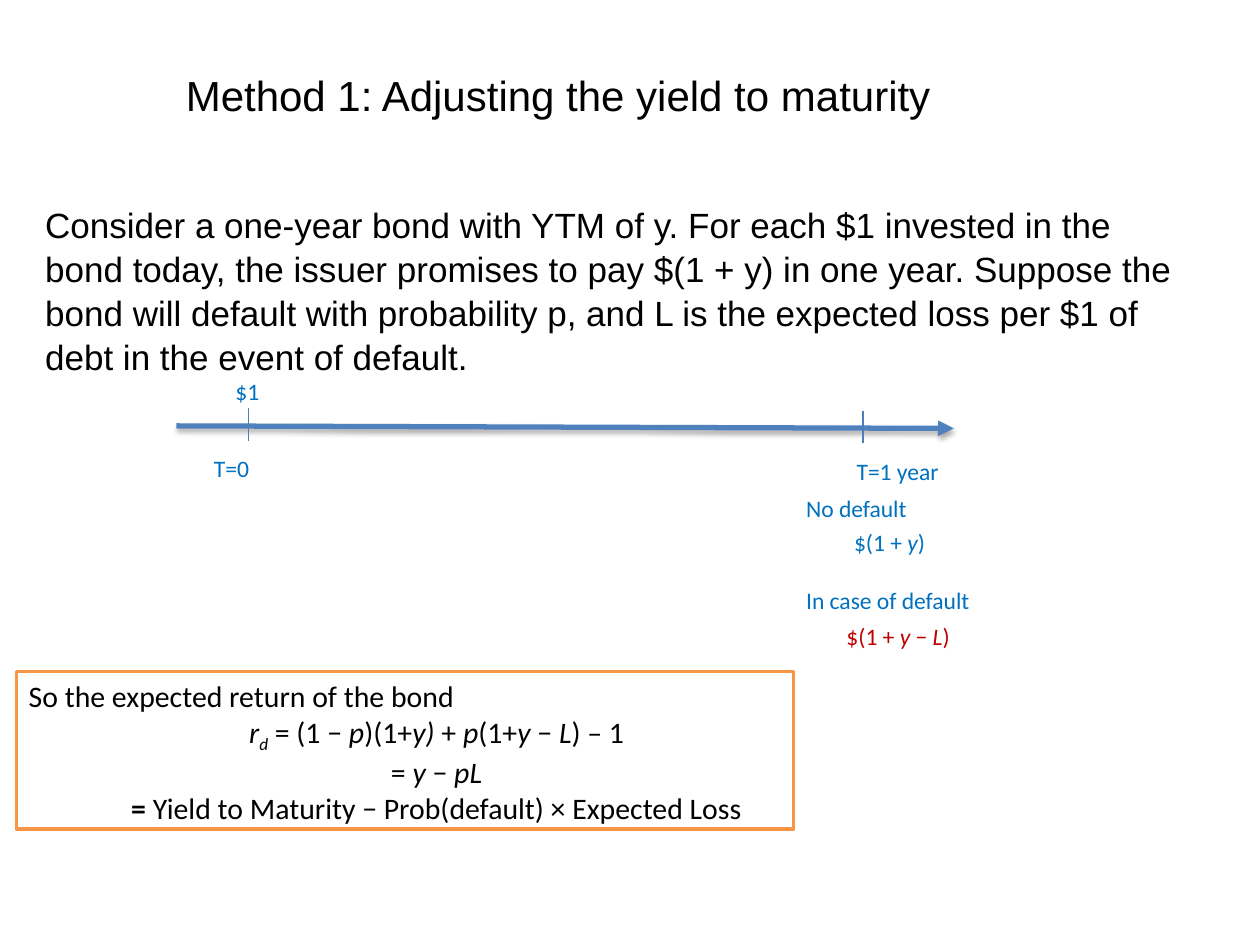
from lxml.etree import SubElement
from pptx import Presentation
from pptx.dml.color import RGBColor
from pptx.enum.shapes import MSO_CONNECTOR, MSO_SHAPE
from pptx.enum.text import MSO_ANCHOR as Anchor, PP_ALIGN as Align
from pptx.oxml.ns import qn
from pptx.util import Emu, Inches, Pt

BLACK, BLUE, RED = "000000", "0070C0", "C00000"
LABEL_HEIGHT = 0.33


def color(hex_code):
    return RGBColor.from_string(hex_code)


def write(paragraph, text, size, font="Calibri", hex_code=BLACK, align=Align.LEFT):
    """Fill a paragraph; parts between asterisks are italic, between underscores subscript."""
    paragraph.alignment = align
    paragraph.font.size = Pt(size)
    paragraph.font.name = font
    paragraph.font.color.rgb = color(hex_code)
    for index, part in enumerate(text.split("*")):
        for level, piece in enumerate(part.split("_")):
            if not piece:
                continue
            run = paragraph.add_run()
            run.text = piece
            run.font.size = Pt(size)
            run.font.name = font
            run.font.color.rgb = color(hex_code)
            if index % 2:
                run.font.italic = True
            if level % 2:
                run.font._element.set("baseline", "-25000")


def add_text(slide, box, text, size, wrap=True, anchor=Anchor.TOP, **style):
    frame = slide.shapes.add_textbox(*map(Inches, box)).text_frame
    frame.word_wrap = wrap
    frame.vertical_anchor = anchor
    write(frame.paragraphs[0], text, size, **style)
    return frame


def add_line(slide, start, end, hex_code, width):
    line = slide.shapes.add_connector(MSO_CONNECTOR.STRAIGHT, *map(Inches, start + end))
    line.line.color.rgb = color(hex_code)
    line.line.width = Pt(width)
    effects = SubElement(line._element.spPr, qn("a:effectLst"))
    return line, effects


def add_heading(slide, box):
    add_text(slide, box, "Method 1: Adjusting the yield to maturity", 24,
             anchor=Anchor.MIDDLE, font="Arial", align=Align.CENTER)


def add_body(slide, box):
    frame = add_text(
        slide, box,
        "Consider a one-year bond with YTM of y. For each $1 invested in the bond today, "
        "the issuer promises to pay $(1 + y) in one year. Suppose the bond will default "
        "with probability p, and L is the expected loss per $1 of debt in the event of default.",
        20, font="Arial")
    frame.paragraphs[0].line_spacing = 1.05


def add_timeline(slide, box):
    left, top, width, height = box

    # Time axis with arrowhead and soft shadow
    axis, effects = add_line(slide, (left, top), (left + width, top + height), "4F81BD", 3)
    SubElement(axis.line._get_or_add_ln(), qn("a:tailEnd"), type="triangle")
    shadow = SubElement(effects, qn("a:outerShdw"), blurRad=str(Emu(Pt(3.1))),
                        dist=str(Emu(Pt(1.8))), dir="5400000", rotWithShape="0")
    shade = SubElement(shadow, qn("a:srgbClr"), val=BLACK)
    SubElement(shade, qn("a:alpha"), val="35000")

    # Ticks at today and at one year
    for x, y in ((0.57, -0.14), (5.45, -0.12)):
        add_line(slide, (left + x, top + y), (left + x, top + y + 0.26), "4B7EBC", 0.75)

    # Dates and payoffs, offset from the start of the axis
    labels = [
        ("$1", 0.37, -0.44, 0.44, False, BLUE),
        ("T=0", 0.2, 0.17, 0.87, True, BLUE),
        ("T=1 year", 5.3, 0.2, 0.87, True, BLUE),
        ("No default", 4.9, 0.49, 2.03, True, BLUE),
        ("$(1 + *y*)", 5.28, 0.76, 0.82, False, BLUE),
        ("In case of default", 4.9, 1.22, 2.03, True, BLUE),
        ("$(1 + *y* − *L*)", 5.22, 1.51, 1.07, False, RED),
    ]
    for text, x, y, label_width, wrap, hex_code in labels:
        add_text(slide, (left + x, top + y, label_width, LABEL_HEIGHT), text, 13.5,
                 wrap=wrap, hex_code=hex_code)


def add_result(slide, box):
    shape = slide.shapes.add_shape(MSO_SHAPE.RECTANGLE, *map(Inches, box))
    shape.shadow.inherit = False
    shape.fill.solid()
    shape.fill.fore_color.rgb = color("FFFFFF")
    shape.line.color.rgb = color("F79646")
    shape.line.width = Pt(2)
    frame = shape.text_frame
    frame.word_wrap = True
    frame.vertical_anchor = Anchor.TOP
    write(frame.paragraphs[0], "So the expected return of the bond", 17)

    # Derivation, one indented and centred step a line
    steps = (
        "*r_d_ *= (1 − *p*)(1+*y)* + *p*(1+*y *− *L*) – 1",
        "= *y *− *pL*",
        "= |Yield to Maturity − Prob(default) × Expected Loss",
    )
    for step in steps:
        paragraph = frame.add_paragraph()
        paragraph.level = 1
        properties = paragraph._p.get_or_add_pPr()
        properties.set("marL", str(Inches(0.5)))
        properties.set("indent", "0")
        bold, _, rest = step.rpartition("|")
        if bold:
            run = paragraph.add_run()
            run.text = bold
            run.font.bold = True
            run.font.size = Pt(17)
            run.font.name = "Calibri"
            run.font.color.rgb = color(BLACK)
        write(paragraph, rest, 17, align=Align.CENTER)


def main():
    presentation = Presentation()
    presentation.slide_width = Inches(10)
    presentation.slide_height = Inches(7.5)
    slide = presentation.slides.add_slide(presentation.slide_layouts[6])
    add_heading(slide, (0.51, 0.21, 7.84, 1.09))
    add_body(slide, (0.26, 1.55, 9.19, 4.37))
    add_timeline(slide, (1.4, 3.38, 6.17, 0.02))
    add_result(slide, (0.13, 5.33, 6.17, 1.25))
    presentation.save("out.pptx")


if __name__ == "__main__":
    main()
